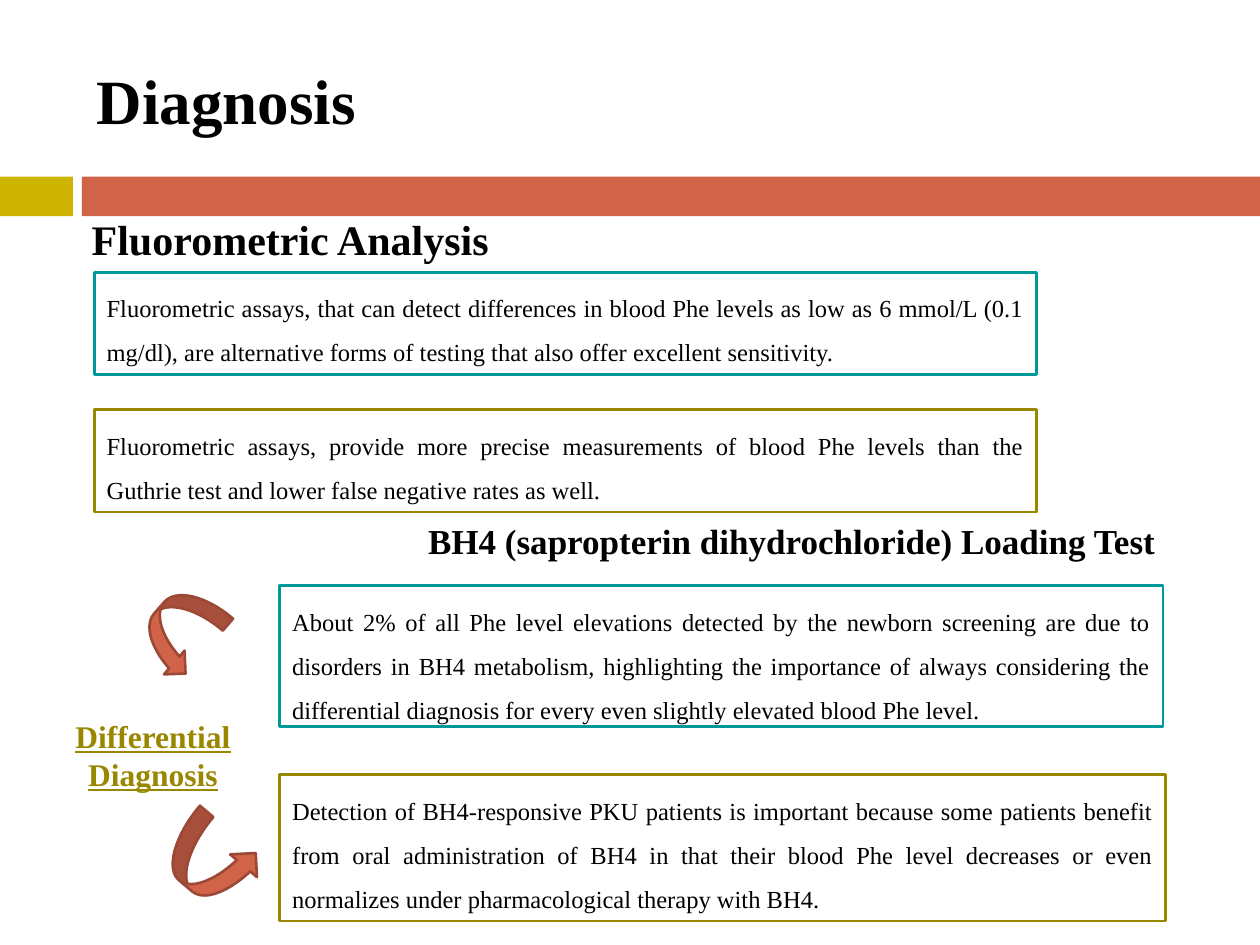
from pptx import Presentation
from pptx.dml.color import RGBColor
from pptx.enum.shapes import MSO_SHAPE
from pptx.enum.text import MSO_ANCHOR, MSO_AUTO_SIZE, PP_ALIGN
from pptx.util import Cm, Pt

theme = {
    "font": "Times New Roman",
    "black": RGBColor.from_string("000000"),
    "white": RGBColor.from_string("FFFFFF"),
    "gold": RGBColor.from_string("CCB400"),
    "olive": RGBColor.from_string("998700"),
    "teal": RGBColor.from_string("009999"),
    "red": RGBColor.from_string("D16349"),
    "rust": RGBColor.from_string("9B4936"),
    "title": Pt(36),
    "head": Pt(24),
    "test": Pt(20),
    "label": Pt(18),
    "body": Pt(14),
    "edge": Pt(1.5),
}


def write(shape, text, size, tone="black", align=PP_ALIGN.LEFT, anchor=MSO_ANCHOR.TOP,
          fit=MSO_AUTO_SIZE.SHAPE_TO_FIT_TEXT, space=1.0, **style):
    frame = shape.text_frame
    frame.text = text
    para = frame.paragraphs[0]
    font = para.runs[0].font
    font.color.rgb = theme[tone]
    looks = {
        frame: {"word_wrap": True, "auto_size": fit, "vertical_anchor": anchor},
        para: {"alignment": align, "line_spacing": space},
        font: {"name": theme["font"], "size": theme[size], **style},
    }
    for item, values in looks.items():
        for name, value in values.items():
            setattr(item, name, value)


def draw(kind, area, fill, edge=None):
    shape = slide.shapes.add_shape(kind, *map(Cm, area))
    shape.shadow.inherit = False
    shape.fill.solid()
    shape.fill.fore_color.rgb = theme[fill]
    if edge:
        shape.line.color.rgb = theme[edge]
        shape.line.width = theme["edge"]
    else:
        shape.line.fill.background()
    return shape


deck = Presentation()
deck.slide_width, deck.slide_height = Cm(25.4), Cm(19.05)
slide = deck.slides.add_slide(deck.slide_layouts[5])

title = slide.shapes.title
place = {"left": Cm(1.7), "top": Cm(0.64), "width": Cm(22.66), "height": Cm(2.74)}
for name, value in place.items():
    setattr(title, name, value)
write(title, "Diagnosis", "title", anchor=MSO_ANCHOR.MIDDLE, fit=MSO_AUTO_SIZE.NONE, bold=True)

for left, width, fill in [(0, 1.47, "gold"), (1.65, 23.75, "red")]:
    draw(MSO_SHAPE.RECTANGLE, (left, 3.56, width, 0.8), fill)

boxes = [
    ((1.9, 5.49, 19, 2.06), "teal",
     "Fluorometric assays, that can detect differences in blood Phe levels as low as "
     "6 mmol/L (0.1 mg/dl), are alternative forms of testing that also offer excellent sensitivity."),
    ((1.9, 8.26, 19, 2.06), "olive",
     "Fluorometric assays, provide more precise measurements of blood Phe levels than the "
     "Guthrie test and lower false negative rates as well."),
    ((5.64, 11.81, 17.81, 2.84), "teal",
     "About 2% of all Phe level elevations detected by the newborn screening are due to "
     "disorders in BH4 metabolism, highlighting the importance of always considering the "
     "differential diagnosis for every even slightly elevated blood Phe level."),
    ((5.64, 15.62, 17.86, 2.95), "olive",
     "Detection of BH4-responsive PKU patients is important because some patients benefit "
     "from oral administration of BH4 in that their blood Phe level decreases or even "
     "normalizes under pharmacological therapy with BH4."),
]
for area, edge, text in boxes:
    box = draw(MSO_SHAPE.RECTANGLE, area, "white", edge)
    write(box, text, "body", align=PP_ALIGN.JUSTIFY, space=1.5)

heads = [
    ((1.6, 4.17, 9.4, 1.27), "Fluorometric Analysis", "head", {}),
    ((8.38, 10.34, 15.8, 1.12), "BH4 (sapropterin dihydrochloride) Loading Test", "test", {}),
    ((1.09, 14.33, 3.99, 1.8), "Differential Diagnosis", "label",
     {"tone": "olive", "align": PP_ALIGN.CENTER, "underline": True}),
]
for area, text, size, style in heads:
    write(slide.shapes.add_textbox(*map(Cm, area)), text, size, bold=True, **style)

for area, turn in [((3, 11.84, 1.27, 1.78), 40.9), ((3.56, 16.46, 1.42, 1.83), 310.3)]:
    draw(MSO_SHAPE.CURVED_RIGHT_ARROW, area, "red", "rust").rotation = turn

deck.save("out.pptx")
